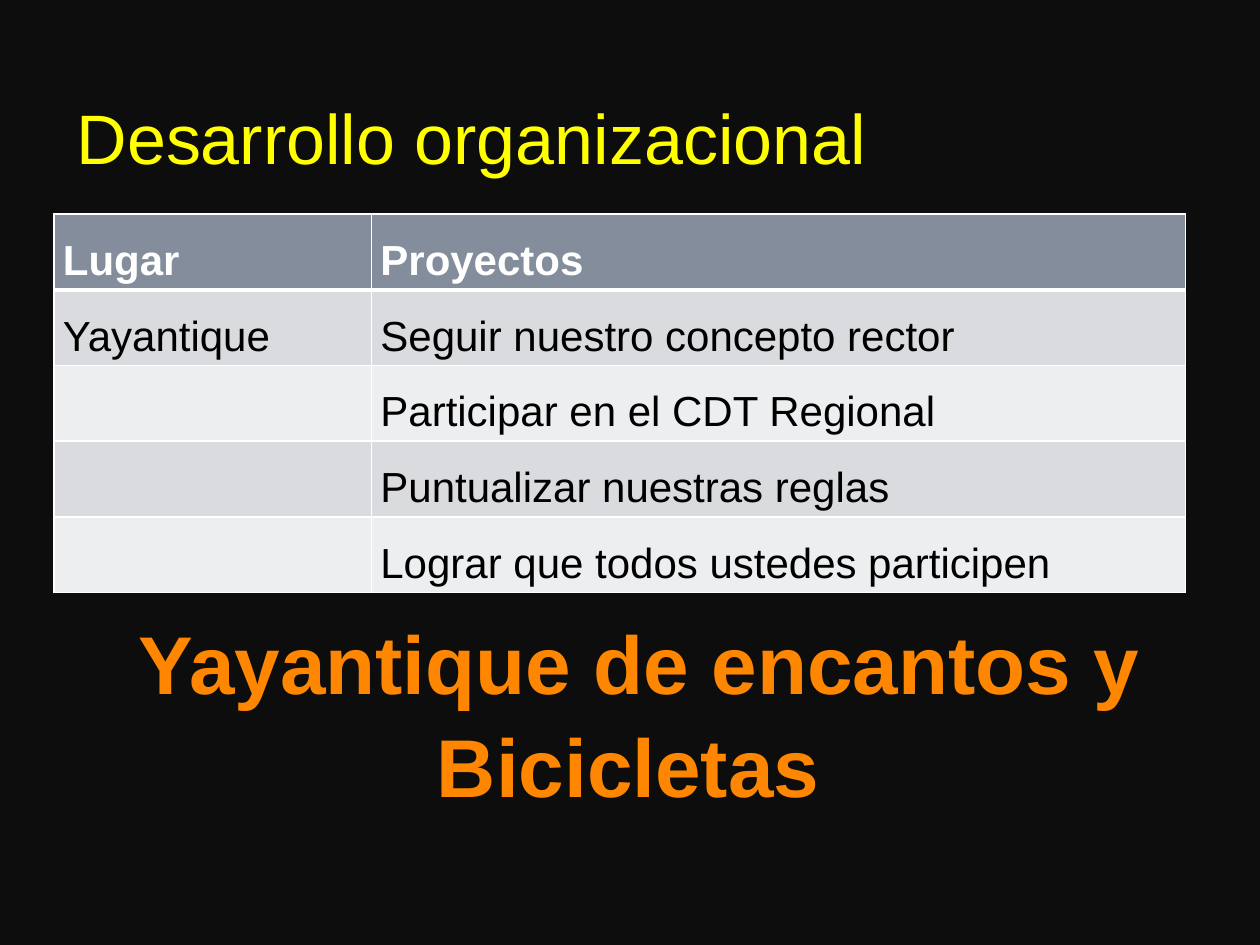
from dataclasses import dataclass

from lxml.etree import SubElement
from pptx import Presentation
from pptx.dml.color import RGBColor
from pptx.enum.text import MSO_ANCHOR, PP_ALIGN
from pptx.oxml.ns import qn
from pptx.util import Inches, Pt


@dataclass(frozen=True)
class Theme:
    font: str = "Arial"
    background: str = "0D0D0D"
    title: str = "FFFF00"
    slogan: str = "FF8600"
    header_fill: str = "838D9B"
    band_fills: tuple = ("D9DBDE", "EDEEEF")
    header_text: str = "FFFFFF"
    body_text: str = "000000"
    border: str = "FFFFFF"
    title_size: float = 40
    table_size: float = 24
    slogan_size: float = 46.8


THEME = Theme()
ROWS = [
    ("Lugar", "Proyectos"),
    ("Yayantique", "Seguir nuestro concepto rector"),
    ("", "Participar en el CDT Regional"),
    ("", "Puntualizar nuestras reglas"),
    ("", "Lograr que todos ustedes participen"),
]


def write_text(frame, text, *, size, color, bold=False, align=PP_ALIGN.LEFT,
               line_spacing=1.0, space_after=0):
    paragraph = frame.paragraphs[0]
    paragraph.alignment = align
    paragraph.line_spacing = line_spacing
    paragraph.space_after = Pt(space_after)
    paragraph.font.size = Pt(size)
    if not text:
        return
    run = paragraph.add_run()
    run.text = text
    run.font.name = THEME.font
    run.font.size = Pt(size)
    run.font.bold = bold
    run.font.color.rgb = RGBColor.from_string(color)


def add_bottom_anchored_box(slide, left, top, width, height):
    shape = slide.shapes.add_textbox(
        Inches(left), Inches(top), Inches(width), Inches(height))
    frame = shape.text_frame
    frame.word_wrap = True
    frame.vertical_anchor = MSO_ANCHOR.BOTTOM
    return frame


def add_title(slide, left, top, width, height):
    frame = add_bottom_anchored_box(slide, left, top, width, height)
    write_text(frame, "Desarrollo organizacional",
               size=THEME.title_size, color=THEME.title)


def set_borders(cell, bottom_width, top_width):
    """Draw the four cell borders; they must precede the cell fill."""
    properties = cell._tc.get_or_add_tcPr()
    widths = {"a:lnL": 1, "a:lnR": 1, "a:lnT": top_width, "a:lnB": bottom_width}
    for tag, width in widths.items():
        line = SubElement(properties, qn(tag), w=str(Pt(width)))
        fill = SubElement(line, qn("a:solidFill"))
        SubElement(fill, qn("a:srgbClr"), val=THEME.border)


def add_projects_table(slide, left, top, column_widths, row_height):
    table = slide.shapes.add_table(
        len(ROWS), len(column_widths), Inches(left), Inches(top),
        Inches(sum(column_widths)), Inches(row_height * len(ROWS))).table
    for column, width in zip(table.columns, column_widths):
        column.width = Inches(width)
    for row_index, texts in enumerate(ROWS):
        is_header = row_index == 0
        fill = THEME.header_fill if is_header else THEME.band_fills[(row_index - 1) % 2]
        for column_index, text in enumerate(texts):
            cell = table.cell(row_index, column_index)
            cell.margin_left = cell.margin_right = Inches(0.07)
            cell.margin_top = cell.margin_bottom = 0
            set_borders(cell, bottom_width=3 if is_header else 1,
                        top_width=3 if row_index == 1 else 1)
            cell.fill.solid()
            cell.fill.fore_color.rgb = RGBColor.from_string(fill)
            write_text(cell.text_frame, text, size=THEME.table_size,
                       color=THEME.header_text if is_header else THEME.body_text,
                       bold=is_header, line_spacing=1.5 if text else 1.0,
                       space_after=6 if text else 0)


def add_slogan(slide, left, top, width, height):
    frame = add_bottom_anchored_box(slide, left, top, width, height)
    frame.margin_left = Inches(0.6)
    frame.margin_bottom = Inches(0.83)
    write_text(frame, "Yayantique de encantos y Bicicletas ",
               size=THEME.slogan_size, color=THEME.slogan, bold=True,
               align=PP_ALIGN.CENTER, line_spacing=1.05)


def main():
    presentation = Presentation()
    presentation.slide_width = Inches(10)
    presentation.slide_height = Inches(7.5)
    slide = presentation.slides.add_slide(presentation.slide_layouts[6])
    slide.background.fill.solid()
    slide.background.fill.fore_color.rgb = RGBColor.from_string(THEME.background)
    add_title(slide, 0.51, 0.21, 8.11, 1.26)
    add_projects_table(slide, 0.43, 1.7, column_widths=(2.52, 6.46), row_height=0.56)
    add_slogan(slide, -0.35, 4.6, 10.35, 2.69)
    presentation.save("out.pptx")


if __name__ == "__main__":
    main()
